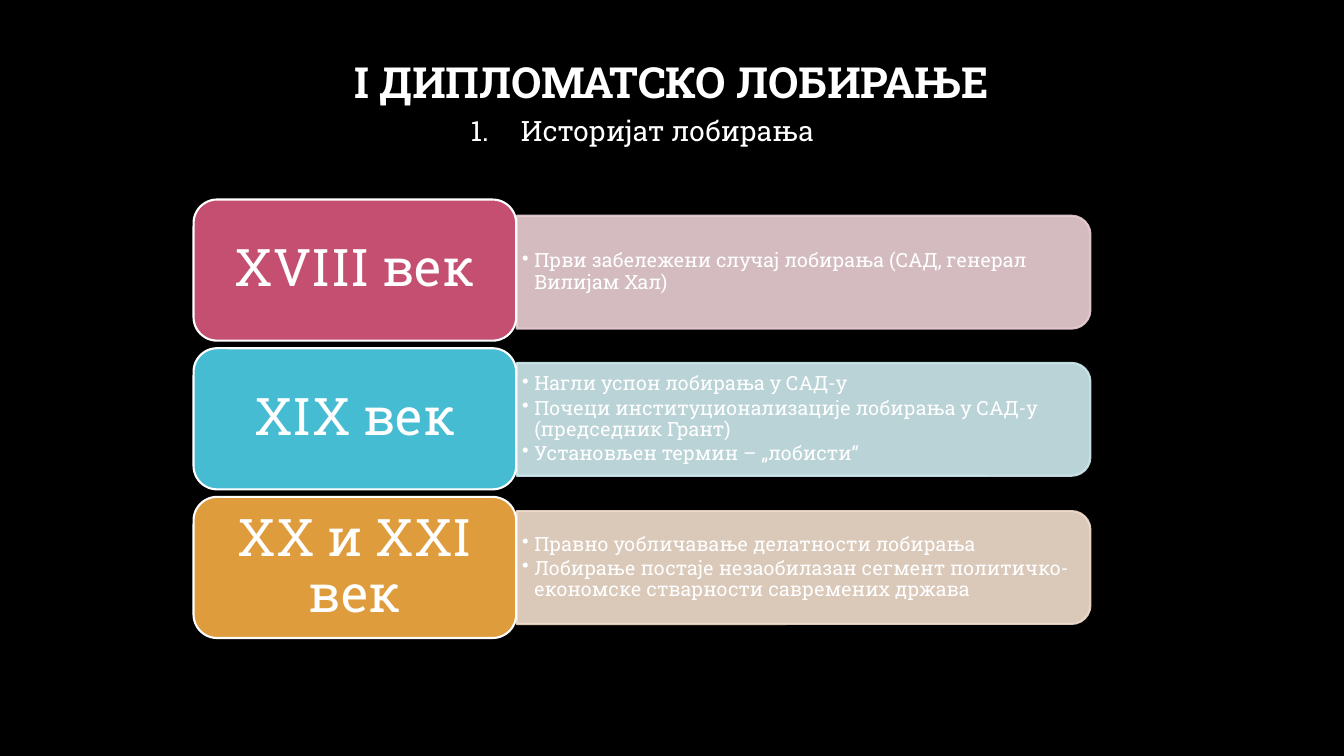
from lxml import etree
from pptx import Presentation
from pptx.dml.color import RGBColor
from pptx.enum import shapes, text
from pptx.oxml import ns
from pptx.util import Inches, Pt

FONT = "Roboto Slab"
BLACK = RGBColor(0x00, 0x00, 0x00)
WHITE = RGBColor(0xFF, 0xFF, 0xFF)
ROSE, PALE_ROSE = RGBColor(0xC5, 0x4F, 0x71), RGBColor(0xEA, 0xD0, 0xD5)
TEAL, PALE_TEAL = RGBColor(0x45, 0xBC, 0xD2), RGBColor(0xCF, 0xEA, 0xEE)
AMBER, PALE_AMBER = RGBColor(0xDE, 0x9C, 0x3C), RGBColor(0xF2, 0xDE, 0xCE)

CARD_LEFT, CARD_TOP, CARD_WIDTH, CARD_HEIGHT = 1.92, 1.98, 3.2, 1.4
CARD_PITCH = 1.475
BAR_CENTER, BAR_LENGTH, BAR_HEIGHT = 7.97, 5.69, 1.12
NOTE_WIDTH, NOTE_HEIGHT = 5.63, 1.01

CENTURIES = [
    ("XVIII век", ROSE, PALE_ROSE, 2.7,
     ["Први забележени случај лобирања (САД, генерал Вилијам Хал)"]),
    ("XIX век", TEAL, PALE_TEAL, 4.16,
     ["Нагли успон лобирања у САД-у",
      "Почеци институционализације лобирања у САД-у (председник Грант)",
      "Установљен термин – „лобисти“"]),
    ("XX и XXI век", AMBER, PALE_AMBER, 5.63,
     ["Правно уобличавање делатности лобирања",
      "Лобирање постаје незаобилазан сегмент политичко-економске стварности савремених држава"]),
]


def set_frame(frame, anchor, side, edge):
    """Set wrapping, anchor and margins of a text frame."""
    frame.word_wrap = True
    frame.vertical_anchor = anchor
    frame.margin_left = frame.margin_right = Inches(side)
    frame.margin_top = frame.margin_bottom = Inches(edge)


def write(para, words, size, align, spacing=0.9, bold=False):
    """Fill a paragraph with white text."""
    para.text = words
    para.alignment = align
    para.line_spacing = spacing
    font = para.font
    font.name, font.size, font.bold = FONT, Pt(size), bold
    font.color.rgb = WHITE


def add_marker(para, tag, indent, **attributes):
    """Give a paragraph a hanging bullet or number."""
    properties = para._p.get_or_add_pPr()
    properties.set("marL", str(Inches(indent)))
    properties.set("indent", str(-Inches(indent)))
    marker = etree.Element(ns.qn(tag), attributes)
    defaults = properties.find(ns.qn("a:defRPr"))
    defaults.addprevious(marker)


def add_text_box(page, left, top, width, height, anchor, side, edge):
    """Add an empty text box and return its frame."""
    box = page.shapes.add_textbox(Inches(left), Inches(top), Inches(width), Inches(height))
    set_frame(box.text_frame, anchor, side, edge)
    return box.text_frame


def add_shape(page, preset, left, top, width, height, fill, line):
    """Add a filled and outlined shape without shadow."""
    shape = page.shapes.add_shape(
        preset, Inches(left), Inches(top), Inches(width), Inches(height))
    shape.shadow.inherit = False
    shape.fill.solid()
    shape.fill.fore_color.rgb = fill
    shape.line.color.rgb = line
    shape.line.width = Pt(1.5)
    return shape


def add_bar(page, middle, color):
    """Add a translucent bar with rounded right corners."""
    bar = add_shape(
        page, shapes.MSO_SHAPE.ROUND_2_SAME_RECTANGLE, BAR_CENTER - BAR_HEIGHT / 2,
        middle - BAR_LENGTH / 2, BAR_HEIGHT, BAR_LENGTH, color, color)
    bar.rotation = 90
    for tone in bar._element.spPr.iter(ns.qn("a:srgbClr")):
        etree.SubElement(tone, ns.qn("a:alpha"), val="90000")


def add_notes(page, middle, notes):
    """Add the bulleted text over a bar."""
    frame = add_text_box(
        page, CARD_LEFT + CARD_WIDTH, middle - NOTE_HEIGHT / 2, NOTE_WIDTH, NOTE_HEIGHT,
        text.MSO_ANCHOR.MIDDLE, 0.06, 0.03)
    for index, note in enumerate(notes):
        para = frame.add_paragraph() if index else frame.paragraphs[0]
        write(para, note, 14, text.PP_ALIGN.LEFT)
        para.space_after = Pt(2.1)
        add_marker(para, "a:buChar", 0.12, char="•")


def add_card(page, top, label, color):
    """Add the rounded card that names a century."""
    card = add_shape(
        page, shapes.MSO_SHAPE.ROUNDED_RECTANGLE, CARD_LEFT, top,
        CARD_WIDTH, CARD_HEIGHT, color, WHITE)
    set_frame(card.text_frame, text.MSO_ANCHOR.MIDDLE, 0.15, 0.08)
    write(card.text_frame.paragraphs[0], label, 37, text.PP_ALIGN.CENTER)


def add_heading(page):
    """Add the title and the numbered subtitle."""
    title = add_text_box(page, 1, 0.67, 11.32, 0.34, text.MSO_ANCHOR.MIDDLE, 0.1, 0.05)
    write(title.paragraphs[0], "I ДИПЛОМАТСКО ЛОБИРАЊЕ", 30.6, text.PP_ALIGN.CENTER, bold=True)
    subtitle = add_text_box(page, 0.71, 1.01, 11.32, 0.6, text.MSO_ANCHOR.TOP, 0.1, 0.05)
    para = subtitle.paragraphs[0]
    write(para, "Историјат лобирања", 20, text.PP_ALIGN.CENTER, spacing=1.2)
    para.space_before = Pt(10)
    add_marker(para, "a:buAutoNum", 0.5, type="arabicPeriod")


def main():
    """Build and save the slide."""
    deck = Presentation()
    deck.slide_width, deck.slide_height = Inches(13.33), Inches(7.5)
    page = deck.slides.add_slide(deck.slide_layouts[6])
    page.background.fill.solid()
    page.background.fill.fore_color.rgb = BLACK
    add_heading(page)
    for row, (label, color, pale, middle, notes) in enumerate(CENTURIES):
        add_bar(page, middle, pale)
        add_notes(page, middle, notes)
        add_card(page, CARD_TOP + row * CARD_PITCH, label, color)
    deck.save("out.pptx")


if __name__ == "__main__":
    main()
